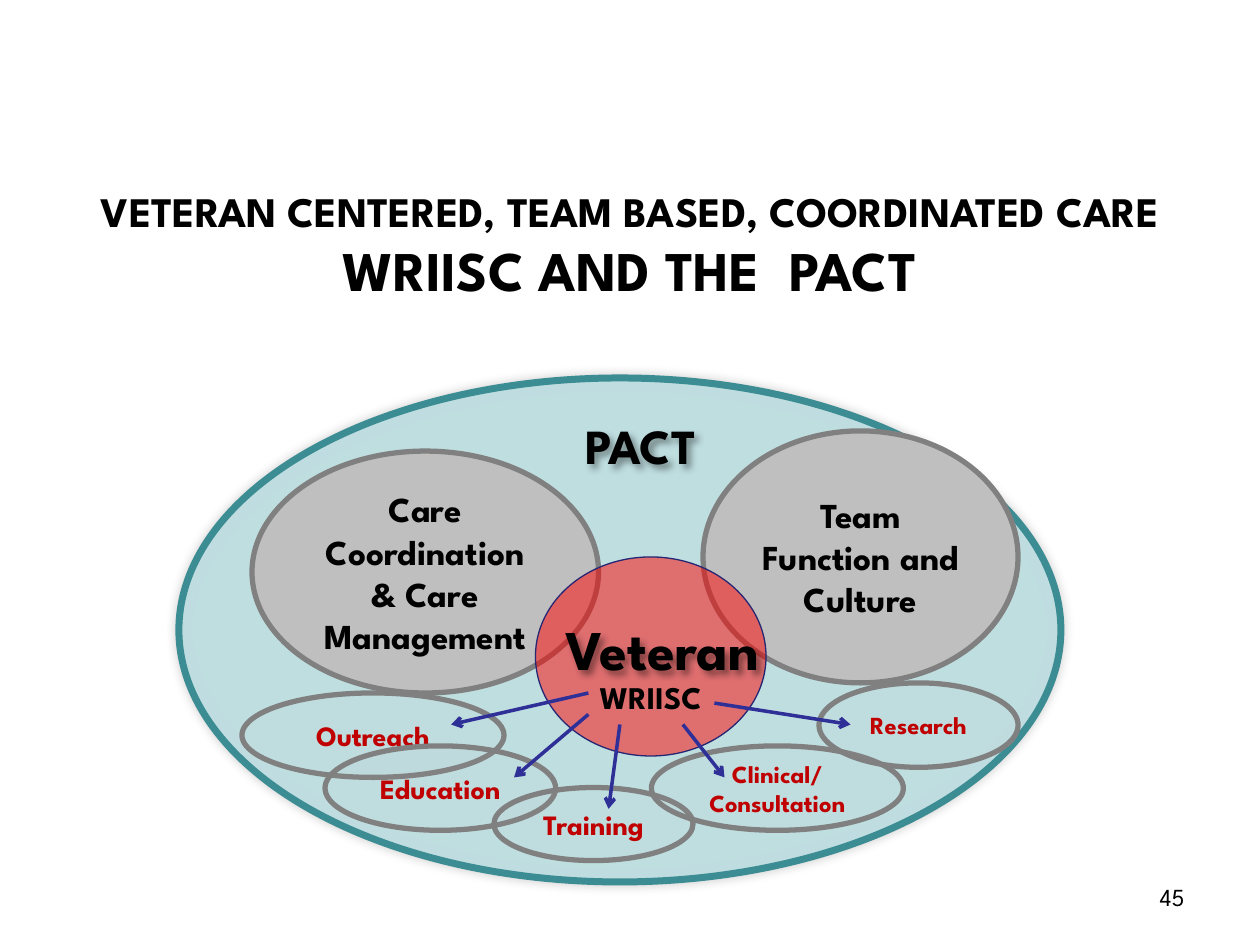
import pptx
import pptx.dml.color
import pptx.enum.shapes
import pptx.enum.text
import pptx.oxml
import pptx.oxml.ns
import pptx.util
from lxml import etree

Inches = pptx.util.Inches
Pt = pptx.util.Pt
RGBColor = pptx.dml.color.RGBColor
Align = pptx.enum.text.PP_ALIGN
Anchor = pptx.enum.text.MSO_ANCHOR
qn = pptx.oxml.ns.qn

FONT = "League Spartan"
BLACK = RGBColor(0x00, 0x00, 0x00)
PALE_TEAL = RGBColor(0xBB, 0xE0, 0xE3)
TEAL = RGBColor(0x3C, 0x8C, 0x93)
LIGHT_GRAY = RGBColor(0xBF, 0xBF, 0xBF)
GRAY = RGBColor(0x80, 0x80, 0x80)
RED = RGBColor(0xFF, 0x00, 0x00)
DARK_RED = RGBColor(0xC0, 0x00, 0x00)
NAVY = RGBColor(0x26, 0x26, 0x73)
BLUE = RGBColor(0x2F, 0x2F, 0x98)


def write_text(shape, *lines, sizes, color=BLACK, bold=True,
               align=Align.CENTER, anchor=Anchor.TOP):
    """Write one paragraph per line, each with its own size in points."""
    frame = shape.text_frame
    frame.word_wrap = True
    frame.vertical_anchor = anchor
    for index, (line, size) in enumerate(zip(lines, sizes)):
        paragraph = frame.add_paragraph() if index else frame.paragraphs[0]
        paragraph.alignment = align
        run = paragraph.add_run()
        run.text = line
        run.font.name = FONT
        run.font.size = Pt(size)
        run.font.bold = bold
        run.font.color.rgb = color


def add_text_box(slide, left, top, width, height, *lines, **text_format):
    box = slide.shapes.add_textbox(
        Inches(left), Inches(top), Inches(width), Inches(height))
    write_text(box, *lines, **text_format)
    return box


def add_shadow(shape, opacity, blur, distance, angle):
    """Give a shape an outer shadow; opacity in percent, lengths in points."""
    shape.shadow.inherit = False
    effects = shape._element.spPr.find(qn("a:effectLst"))
    shadow = etree.SubElement(
        effects, qn("a:outerShdw"), blurRad=str(Pt(blur)),
        dist=str(Pt(distance)), dir=str(angle * 60000), rotWithShape="0")
    color = etree.SubElement(shadow, qn("a:srgbClr"), val=str(BLACK))
    etree.SubElement(color, qn("a:alpha"), val=str(opacity * 1000))


def add_ellipse(slide, left, top, width, height, fill, line, line_width, opacity=100):
    ellipse = slide.shapes.add_shape(
        pptx.enum.shapes.MSO_SHAPE.OVAL,
        Inches(left), Inches(top), Inches(width), Inches(height))
    ellipse.shadow.inherit = False
    ellipse.fill.solid()
    ellipse.fill.fore_color.rgb = fill
    if opacity < 100:
        color = ellipse._element.spPr.find(qn("a:solidFill"))[0]
        etree.SubElement(color, qn("a:alpha"), val=str(opacity * 1000))
    ellipse.line.color.rgb = line
    ellipse.line.width = Pt(line_width)
    return ellipse


def add_arrow(slide, start_x, start_y, end_x, end_y):
    arrow = slide.shapes.add_connector(
        pptx.enum.shapes.MSO_CONNECTOR.STRAIGHT,
        Inches(start_x), Inches(start_y), Inches(end_x), Inches(end_y))
    arrow.line.color.rgb = BLUE
    arrow.line.width = Pt(2)
    properties = arrow._element.spPr
    etree.SubElement(properties.find(qn("a:ln")), qn("a:tailEnd"), type="arrow")
    etree.SubElement(properties, qn("a:effectLst"))


def add_title(slide, left, top, width, height):
    add_text_box(slide, left, top, width, height,
                 "VETERAN CENTERED, TEAM BASED, COORDINATED CARE",
                 "WRIISC AND THE  PACT", sizes=(24, 32))


def add_care_areas(slide, left, top):
    areas = [
        ("Team Function and Culture", 4.16, 0.42, 2.5, 2),
        ("Care Coordination & Care Management", 0.58, 0.58, 2.75, 1.92),
    ]
    for text, x, y, width, height in areas:
        ellipse = add_ellipse(slide, left + x, top + y, width, height,
                              LIGHT_GRAY, GRAY, 3)
        write_text(ellipse, text, sizes=(20,), anchor=Anchor.MIDDLE)


def add_center(slide, left, top):
    add_ellipse(slide, left + 2.83, top + 1.42, 1.83, 1.58, RED, NAVY, 0.75, opacity=50)
    labels = [
        ("Veteran", 1.75, 1.83, 0.64, 32, True),
        ("WRIISC", 1.66, 2.33, 0.4, 18, False),
        ("PACT", 1.58, 0.25, 0.57, 28, True),
    ]
    for text, x, y, height, size, shadowed in labels:
        box = add_text_box(slide, left + x, top + y, 4.17, height, text, sizes=(size,))
        if shadowed:
            add_shadow(box, opacity=40, blur=4, distance=3, angle=45)


def add_services(slide, left, top):
    services = [
        ("Outreach", 0.5, 2.5, 2.08, 0.67, 16),
        ("Education", 1.16, 2.92, 1.83, 0.67, 16),
        ("Training", 2.5, 3.25, 1.58, 0.58, 16),
        ("Clinical/ Consultation", 3.75, 2.92, 2, 0.67, 14),
        ("Research", 5.08, 2.42, 1.58, 0.67, 14),
    ]
    for text, x, y, width, height, size in services:
        ellipse = add_ellipse(slide, left + x, top + y, width, height,
                              LIGHT_GRAY, GRAY, 3, opacity=4)
        write_text(ellipse, text, sizes=(size,), color=DARK_RED, anchor=Anchor.MIDDLE)

    arrows = [
        (3.25, 2.5, 2.16, 2.75),
        (3.25, 2.67, 2.66, 3.17),
        (3.5, 2.75, 3.41, 3.42),
        (4, 2.75, 4.33, 3.17),
        (4.25, 2.58, 5.33, 2.75),
    ]
    for start_x, start_y, end_x, end_y in arrows:
        add_arrow(slide, left + start_x, top + start_y, left + end_x, top + end_y)


def add_pact_diagram(slide, left, top, width, height):
    pact = add_ellipse(slide, left, top, width, height, PALE_TEAL, TEAL, 4, opacity=83)
    add_shadow(pact, opacity=20, blur=6, distance=0, angle=225)
    add_care_areas(slide, left, top)
    add_center(slide, left, top)
    add_services(slide, left, top)


def main():
    presentation = pptx.Presentation()
    presentation.slide_width = Inches(10)
    presentation.slide_height = Inches(7.5)
    slide = presentation.slides.add_slide(presentation.slide_layouts[6])
    add_text_box(slide, 7.17, 6.95, 2.33, 0.4, "45",
                 sizes=(14,), bold=False, align=Align.RIGHT)
    add_title(slide, 0, 1.42, 10, 1.04)
    add_pact_diagram(slide, 1.42, 3, 7, 4)
    presentation.save("out.pptx")


if __name__ == "__main__":
    main()
